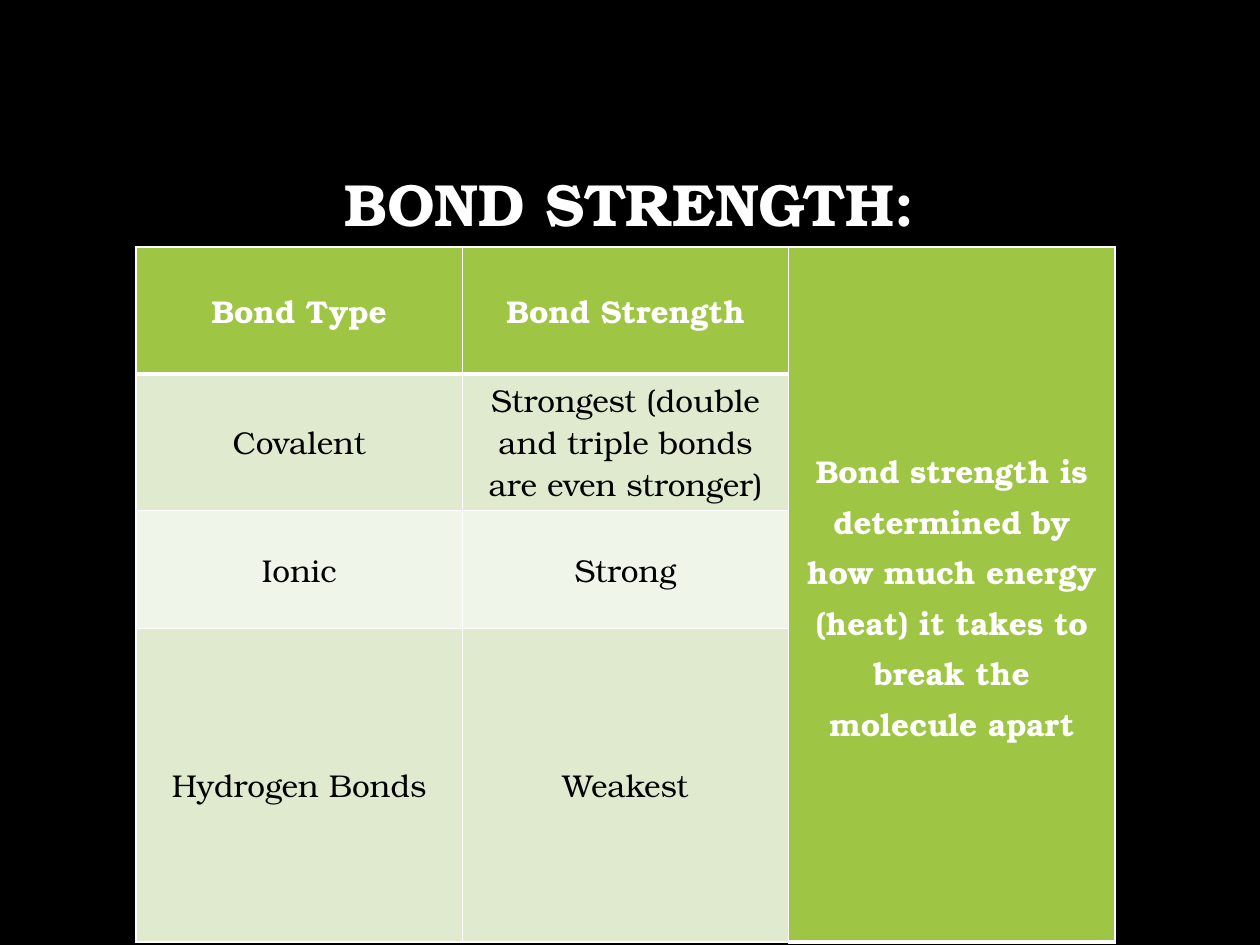
from lxml.etree import SubElement
from pptx import Presentation
from pptx.dml.color import RGBColor
from pptx.enum.text import MSO_ANCHOR, PP_ALIGN
from pptx.oxml.ns import qn
from pptx.util import Inches, Pt

FONT = "TeX Gyre Bonum"
COLORS = {
    "background": "000000",
    "white": "FFFFFF",
    "black": "000000",
    "header": "9EC544",
    "odd_row": "DFEACF",
    "even_row": "F0F5E9",
}
ROWS = [
    ("Bond Type", "Bond Strength",
     "Bond strength is determined by how much energy (heat) it takes to break the molecule apart"),
    ("Covalent", "Strongest (double and triple bonds are even stronger)", ""),
    ("Ionic", "Strong", ""),
    ("Hydrogen Bonds", "Weakest", ""),
]
ROW_HEIGHTS = (1.01, 0.97, 0.94, 0.94)
COLUMN_WIDTH = 2.59
NOTE_COLUMN = 2


def rgb(name):
    return RGBColor.from_string(COLORS[name])


def format_paragraph(p, size, color, bold, spacing=None):
    p.alignment = PP_ALIGN.CENTER
    p.line_spacing = spacing
    p.font.name = FONT
    p.font.size = Pt(size)
    p.font.bold = bold
    p.font.color.rgb = rgb(color)


def add_title(s, text):
    sp = s.shapes.title
    sp.left, sp.top = Inches(0.75), Inches(1.1)
    sp.width, sp.height = Inches(8.49), Inches(1.09)
    tf = sp.text_frame
    tf.text = text
    tf.word_wrap = True
    tf.vertical_anchor = MSO_ANCHOR.MIDDLE
    format_paragraph(tf.paragraphs[0], 34, "white", True, 0.9)


def set_borders(cell, bottom_width):
    tc_pr = cell._tc.get_or_add_tcPr()
    for side, width in (("L", 1), ("R", 1), ("T", 1), ("B", bottom_width)):
        line = SubElement(tc_pr, qn(f"a:ln{side}"), w=str(Pt(width)))
        fill = SubElement(line, qn("a:solidFill"))
        SubElement(fill, qn("a:srgbClr"), val=COLORS["white"])


def format_cell(cell, text, fill, is_header, spacing):
    cell.margin_left = cell.margin_right = Inches(0.07)
    cell.margin_top = cell.margin_bottom = Inches(0.04)
    cell.vertical_anchor = MSO_ANCHOR.MIDDLE
    set_borders(cell, 3 if is_header else 1)
    cell.fill.solid()
    cell.fill.fore_color.rgb = rgb(fill)
    cell.text = text
    color = "white" if is_header else "black"
    format_paragraph(cell.text_frame.paragraphs[0], 18, color, is_header, spacing)


def add_bond_table(s):
    frame = s.shapes.add_table(
        len(ROWS), len(ROWS[0]), Inches(1.08), Inches(1.96),
        Inches(COLUMN_WIDTH * len(ROWS[0])), Inches(sum(ROW_HEIGHTS)))
    table = frame.table
    for column in table.columns:
        column.width = Inches(COLUMN_WIDTH)
    for row, height in zip(table.rows, ROW_HEIGHTS):
        row.height = Inches(height)
    table.cell(0, NOTE_COLUMN).merge(table.cell(len(ROWS) - 1, NOTE_COLUMN))
    for i, texts in enumerate(ROWS):
        for j, text in enumerate(texts):
            is_note = j == NOTE_COLUMN
            is_header = i == 0 or is_note
            band = "odd_row" if i % 2 else "even_row"
            format_cell(table.cell(i, j), text, "header" if is_header else band,
                        is_header, 1.1 if is_note else None)


def main():
    prs = Presentation()
    prs.slide_width, prs.slide_height = Inches(10), Inches(7.5)
    s = prs.slides.add_slide(prs.slide_layouts[5])
    s.background.fill.solid()
    s.background.fill.fore_color.rgb = rgb("background")
    add_bond_table(s)
    add_title(s, "BOND STRENGTH:")
    prs.save("out.pptx")


if __name__ == "__main__":
    main()
